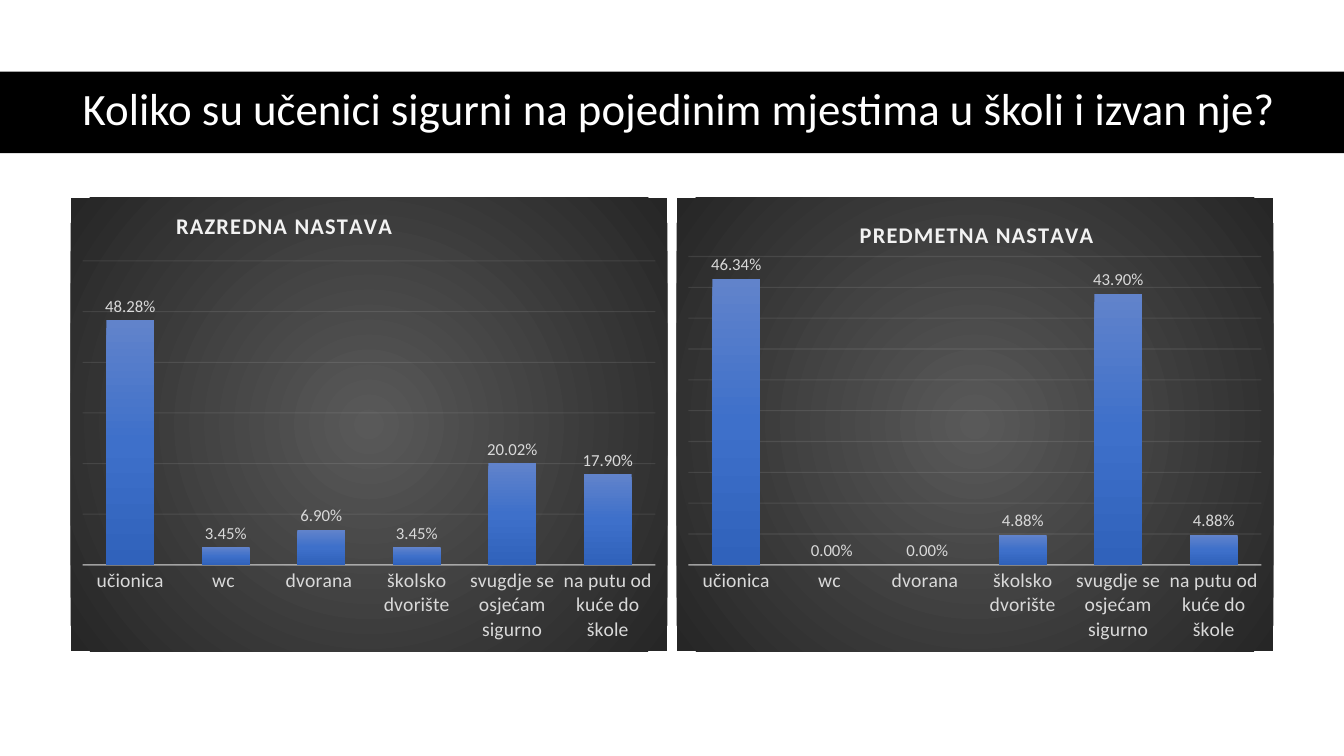
from dataclasses import dataclass

from pptx import Presentation
from pptx.chart.data import CategoryChartData
from pptx.dml.color import RGBColor
from pptx.enum.chart import XL_CHART_TYPE as ChartType
from pptx.enum.chart import XL_LABEL_POSITION as LabelPos
from pptx.enum.chart import XL_TICK_MARK as Tick
from pptx.enum.shapes import MSO_SHAPE as Shape
from pptx.enum.text import MSO_ANCHOR as Anchor
from pptx.enum.text import PP_ALIGN as Align
from pptx.oxml import parse_xml
from pptx.oxml.ns import nsdecls, qn
from pptx.util import Inches, Pt


@dataclass(frozen=True)
class Theme:
    font: str = "Calibri"
    band: str = "000000"
    heading: str = "FFFFFF"
    light: str = "F2F2F2"
    muted: str = "D9D9D9"
    bar: tuple = ((0, "6183CB"), (50, "3E70CA"), (100, "3062BB"))
    panel: tuple = ((0, "595959"), (100, "262626"))
    heading_size: int = 32
    chart_title_size: int = 16
    axis_size: int = 14
    label_size: int = 12
    base_size: int = 10


PERCENT = "0.00%"
PLACES = ["učionica", "wc ", "dvorana ", "školsko dvorište",
          "svugdje se osjećam sigurno", "na putu od kuće do škole"]


def gradient(stops, direction):
    gs = "".join(f'<a:gs pos="{pos * 1000}"><a:srgbClr val="{color}"/></a:gs>'
                 for pos, color in stops)
    return parse_xml(f'<a:gradFill {nsdecls("a")} rotWithShape="1">'
                     f'<a:gsLst>{gs}</a:gsLst>{direction}</a:gradFill>')


def set_layout(parent, index, inner=False, **fractions):
    """Place a chart part by fractions (x, y, w, h) of the chart's size."""
    for old in parent.findall(qn("c:layout")):
        parent.remove(old)
    target = '<c:layoutTarget val="inner"/>' if inner else ""
    modes = "".join(f'<c:{k}Mode val="edge"/>' for k in "xy")
    values = "".join(f'<c:{k} val="{v}"/>' for k, v in fractions.items())
    parent.insert(index, parse_xml(
        f'<c:layout {nsdecls("c")}><c:manualLayout>{target}{modes}{values}'
        f'</c:manualLayout></c:layout>'))


class SlideBuilder:
    def __init__(self, slide, theme):
        self.slide = slide
        self.theme = theme

    def style_font(self, font, size, color, bold=False):
        font.name = self.theme.font
        font.size = Pt(size)
        font.bold = bold
        font.color.rgb = RGBColor.from_string(color)

    def style_line(self, line, width, opacity):
        line.width = Pt(width)
        line.fill.solid()
        line.color.rgb = RGBColor.from_string(self.theme.light)
        for clr in line.fill._xPr.iter(qn("a:srgbClr")):
            clr.append(parse_xml(
                f'<a:alpha {nsdecls("a")} val="{opacity * 1000}"/>'))

    def band(self, x, y, w, h):
        sp = self.slide.shapes.add_shape(
            Shape.RECTANGLE, Inches(x), Inches(y), Inches(w), Inches(h))
        sp.shadow.inherit = False
        sp.fill.solid()
        sp.fill.fore_color.rgb = RGBColor.from_string(self.theme.band)
        sp.line.fill.background()

    def heading(self, text, x, y, w, h):
        sp = self.slide.shapes.add_textbox(
            Inches(x), Inches(y), Inches(w), Inches(h))
        tf = sp.text_frame
        tf.word_wrap = True
        tf.vertical_anchor = Anchor.MIDDLE
        tf.text = text
        p = tf.paragraphs[0]
        p.alignment = Align.CENTER
        p.line_spacing = 0.9
        self.style_font(p.runs[0].font, self.theme.heading_size,
                        self.theme.heading)

    def column_chart(self, title, values, box, title_at, plot_y, plot_h,
                     top, step):
        data = CategoryChartData(number_format=PERCENT)
        data.categories = PLACES
        data.add_series("Series 1", values)
        chart = self.slide.shapes.add_chart(
            ChartType.COLUMN_CLUSTERED, *map(Inches, box), data).chart
        self.style_font(chart.font, self.theme.base_size, self.theme.band)
        chart.has_legend = False
        chart._chartSpace.find(qn("c:chart")).addnext(self.panel_fill())
        self.chart_title(chart, title, title_at)
        set_layout(chart._chartSpace.find(".//" + qn("c:plotArea")), 0,
                   inner=True, x=0.02, y=plot_y, w=0.96, h=plot_h)
        self.axes(chart, top, step)
        self.columns(chart.plots[0])

    def panel_fill(self):
        sp_pr = parse_xml(f'<c:spPr {nsdecls("c", "a")}>'
                          '<a:ln><a:noFill/></a:ln></c:spPr>')
        centre = " ".join(f'{side}="50000"' for side in "ltrb")
        sp_pr.insert(0, gradient(
            self.theme.panel,
            f'<a:path path="circle"><a:fillToRect {centre}/></a:path>'))
        return sp_pr

    def chart_title(self, chart, text, at):
        tf = chart.chart_title.text_frame
        tf.text = text
        r = tf.paragraphs[0].runs[0]
        self.style_font(r.font, self.theme.chart_title_size,
                        self.theme.light, bold=True)
        r.font._element.set("spc", "100")
        set_layout(chart.chart_title._element, 1, x=at[0], y=at[1])

    def axes(self, chart, top, step):
        cat = chart.category_axis
        cat.major_tick_mark = cat.minor_tick_mark = Tick.NONE
        self.style_font(cat.tick_labels.font, self.theme.axis_size,
                        self.theme.muted)
        self.style_line(cat.format.line, 1, 54)
        val = chart.value_axis
        val.minimum_scale, val.maximum_scale, val.major_unit = 0, top, step
        val.tick_labels.number_format = PERCENT
        val.tick_labels.number_format_is_linked = False
        self.style_line(val.major_gridlines.format.line, 0.75, 10)
        val.visible = False

    def columns(self, plot):
        plot.gap_width = 100
        plot.overlap = -24
        plot.vary_by_categories = False
        ser = plot.series[0]
        ser._element.get_or_add_spPr().append(
            gradient(self.theme.bar, '<a:lin ang="5400000" scaled="0"/>'))
        plot.has_data_labels = True
        labels = plot.data_labels
        labels.show_value = True
        labels.position = LabelPos.OUTSIDE_END
        labels.number_format = PERCENT
        labels.number_format_is_linked = False
        self.style_font(labels.font, self.theme.label_size, self.theme.muted)


def main():
    prs = Presentation()
    prs.slide_width, prs.slide_height = Inches(13.33), Inches(7.5)
    s = SlideBuilder(prs.slides.add_slide(prs.slide_layouts[6]), Theme())
    s.band(0, 0.71, 13.33, 0.81)
    s.heading("Koliko su učenici sigurni na pojedinim mjestima "
              "u školi i izvan nje?", 0.61, 0.7, 12.26, 0.81)
    s.column_chart("RAZREDNA NASTAVA",
                   [0.4828, 0.0345, 0.069, 0.0345, 0.2002, 0.179],
                   box=(0.7, 1.96, 5.92, 4.5), title_at=(0.17, 0.02),
                   plot_y=0.14, plot_h=0.67, top=0.6, step=0.1)
    s.column_chart("PREDMETNA NASTAVA",
                   [0.4634, 0, 0, 0.0488, 0.439, 0.0488],
                   box=(6.71, 1.96, 5.92, 4.5), title_at=(0.3, 0.04),
                   plot_y=0.13, plot_h=0.68, top=0.5, step=0.05)
    prs.save("out.pptx")


if __name__ == "__main__":
    main()
